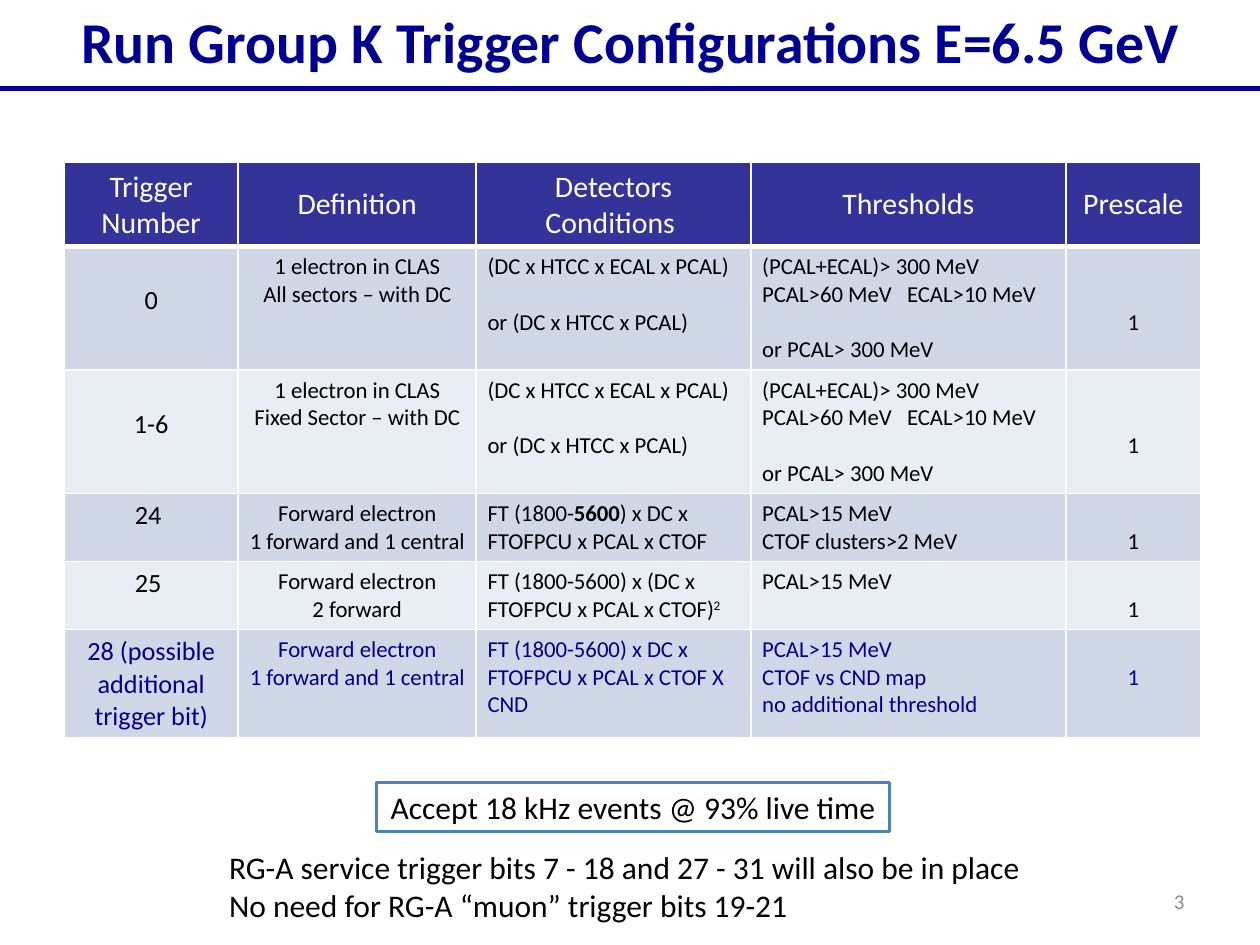
from lxml import etree
from pptx import Presentation
from pptx.dml.color import RGBColor
from pptx.enum.shapes import MSO_CONNECTOR, MSO_SHAPE
from pptx.enum.text import MSO_ANCHOR, MSO_AUTO_SIZE, PP_ALIGN
from pptx.oxml import parse_xml
from pptx.oxml.ns import nsdecls, qn
from pptx.util import Inches, Pt

colour = RGBColor.from_string
NAVY, BLACK, WHITE = "000090", "000000", "FFFFFF"
LEFT, CENTER, RIGHT = PP_ALIGN.LEFT, PP_ALIGN.CENTER, PP_ALIGN.RIGHT
MIDDLE, TOP = MSO_ANCHOR.MIDDLE, MSO_ANCHOR.TOP
LINE_SPACING = 1.22


def write(frame, lines, size, color, align=LEFT, bold=False):
    """Write lines of text or (text, font format) runs; None leaves a line's gap."""
    paragraph, gap = None, 0
    for line in lines:
        if line is None:
            gap += size * LINE_SPACING
            continue
        if paragraph is None:
            paragraph = frame.paragraphs[0]
            frame.margin_top = Inches(0.05) + Pt(gap)
        else:
            paragraph = frame.add_paragraph()
            paragraph.space_before = Pt(gap)
        gap = 0
        paragraph.alignment = align
        for text, changes in [(line, {})] if isinstance(line, str) else line:
            run = paragraph.add_run()
            run.text = text
            run.font.color.rgb = colour(color)
            baseline = changes.get("baseline")
            if baseline:
                run.font._element.set("baseline", baseline)
            values = {"name": "Calibri", "size": Pt(size),
                      "bold": changes.get("bold", bold)}
            for name, value in values.items():
                setattr(run.font, name, value)


presentation = Presentation()
presentation.slide_width, presentation.slide_height = Inches(10), Inches(7.5)
slide = presentation.slides.add_slide(presentation.slide_layouts[6])

# Title and rule
rule = slide.shapes.add_connector(
    MSO_CONNECTOR.STRAIGHT, Inches(0), Inches(0.7), Inches(10), Inches(0.7))
rule.line.color.rgb = colour(NAVY)
rule.line.width = Pt(3)
etree.SubElement(rule._element.spPr, qn("a:effectLst"))

title = slide.shapes.add_textbox(Inches(0.15), Inches(0), Inches(9.71), Inches(0.79))
title.text_frame.word_wrap = True
write(title.text_frame, ["Run Group K Trigger Configurations E=6.5 GeV"],
      33, NAVY, CENTER, True)

# Trigger table
detectors = ["(DC x HTCC x ECAL x PCAL)", None, "or (DC x HTCC x PCAL)"]
thresholds = ["(PCAL+ECAL)> 300 MeV", "PCAL>60 MeV\tECAL>10 MeV", None,
              "or PCAL> 300 MeV"]
rows = [
    [["Trigger Number"], ["Definition"], ["Detectors", "Conditions "],
     ["Thresholds"], ["Prescale"]],
    [[None, "0"], ["1 electron in CLAS", "All sectors – with DC"],
     detectors, thresholds, [None, None, "1"]],
    [[None, "1-6"], ["1 electron in CLAS", "Fixed Sector – with DC"],
     detectors, thresholds, [None, None, "1"]],
    [["24 "], ["Forward electron", "1 forward and 1 central"],
     [[("FT (1800-", {}), ("5600", {"bold": True}),
       (") x DC x FTOFPCU x PCAL x CTOF", {})]],
     ["PCAL>15 MeV", "CTOF clusters>2 MeV"], [None, "1"]],
    [["25 "], ["Forward electron", "2 forward"],
     [[("FT (1800-5600) x (DC x FTOFPCU x PCAL x CTOF)", {}),
       ("2", {"baseline": "30000"})]],
     ["PCAL>15 MeV"], [None, "1"]],
    [["28 (possible additional trigger bit)"],
     ["Forward electron", "1 forward and 1 central"],
     ["FT (1800-5600) x DC x FTOFPCU x PCAL x CTOF X CND"],
     ["PCAL>15 MeV", "CTOF vs CND map", "no additional threshold"], [None, "1"]],
]
column_widths = [1.38, 1.89, 2.18, 2.5, 1.07]
row_heights = [0.66, 0.98, 0.98, 0.54, 0.54, 0.86]
column_aligns = [CENTER, CENTER, LEFT, LEFT, CENTER]

table = slide.shapes.add_table(
    len(rows), len(column_widths), Inches(0.51), Inches(1.29),
    Inches(sum(column_widths)), Inches(sum(row_heights))).table
table.horz_banding = False
for column, width in zip(table.columns, column_widths):
    column.width = Inches(width)
for row, height in zip(table.rows, row_heights):
    row.height = Inches(height)

for row_index, row in enumerate(rows):
    header = row_index == 0
    fill = "333399" if header else ("E9EDF4", "D0D8E8")[row_index % 2]
    color = WHITE if header else NAVY if row_index == len(rows) - 1 else BLACK
    for column_index, lines in enumerate(row):
        cell = table.cell(row_index, column_index)
        size = 17 if header else 15 if column_index == 0 else 13
        align = CENTER if header else column_aligns[column_index]
        write(cell.text_frame, lines, size, color, align)
        # A cell keeps its top margin on itself, not on its text frame
        leading = next(i for i, line in enumerate(lines) if line is not None)
        cell_format = {
            "margin_left": Inches(0.09), "margin_right": Inches(0.09),
            "margin_top": Inches(0.05) + Pt(leading * size * LINE_SPACING),
            "margin_bottom": Inches(0.05),
            "vertical_anchor": MIDDLE if header else TOP,
        }
        for name, value in cell_format.items():
            setattr(cell, name, value)
        properties = cell._tc.get_or_add_tcPr()
        for side in "LRTB":
            width = Pt(3 if header and side == "B" else 1)
            properties.append(parse_xml(
                f'<a:ln{side} {nsdecls("a")} w="{width}"><a:solidFill>'
                f'<a:srgbClr val="{WHITE}"/></a:solidFill></a:ln{side}>'))
        cell.fill.solid()
        cell.fill.fore_color.rgb = colour(fill)
        for paragraph in cell.text_frame.paragraphs:
            if "\t" in paragraph.text:
                paragraph._p.get_or_add_pPr().append(parse_xml(
                    f'<a:tabLst {nsdecls("a")}>'
                    f'<a:tab pos="{Inches(1.15)}" algn="l"/></a:tabLst>'))

# Slide number
number = slide.shapes.add_textbox(Inches(7.17), Inches(6.95), Inches(2.33), Inches(0.4))
number.text_frame.word_wrap = True
number.text_frame.vertical_anchor = MIDDLE
write(number.text_frame, ["3"], 12, "8C8C8C", RIGHT)

# Event rate and notes
rate = slide.shapes.add_shape(
    MSO_SHAPE.RECTANGLE, Inches(2.99), Inches(6.21), Inches(4.07), Inches(0.39))
rate.shadow.inherit = False
rate.fill.solid()
rate.fill.fore_color.rgb = colour(WHITE)
rate.line.color.rgb = colour("4F81BD")
rate.line.width = Pt(2)
write(rate.text_frame, ["Accept 18 kHz events @ 93% live time"], 18, BLACK, CENTER)

notes = slide.shapes.add_textbox(Inches(1.72), Inches(6.68), Inches(6.63), Inches(0.71))
write(notes.text_frame,
      ["RG-A service trigger bits 7 - 18 and 27 - 31 will also be in place",
       "No need for RG-A “muon” trigger bits 19-21"], 18, BLACK)

for shape in (rate, notes):
    shape.text_frame.word_wrap = False
    shape.text_frame.auto_size = MSO_AUTO_SIZE.SHAPE_TO_FIT_TEXT

presentation.save("out.pptx")
